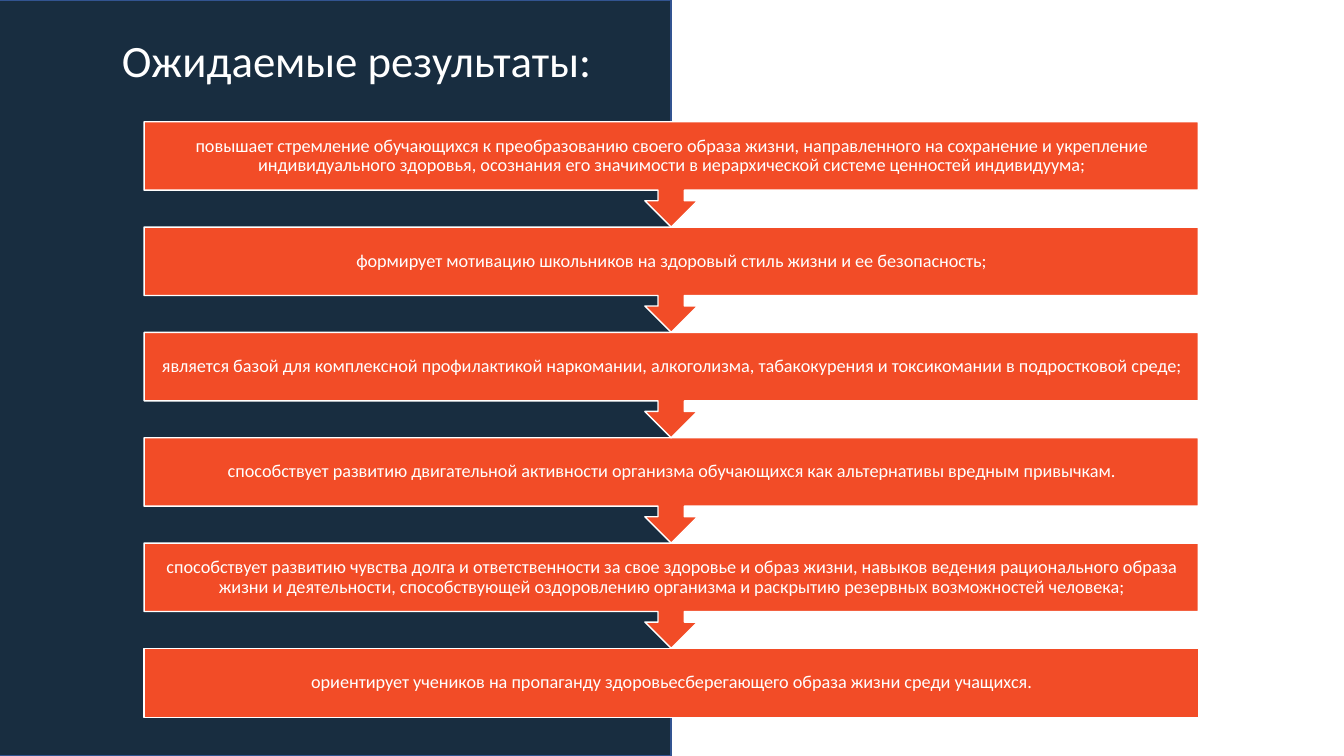
import pptx
import pptx.util
import pptx.dml.color
import pptx.enum.shapes
import pptx.enum.text

NAVY = pptx.dml.color.RGBColor(0x18, 0x2D, 0x40)
NAVY_EDGE = pptx.dml.color.RGBColor(0x32, 0x54, 0x91)
ORANGE = pptx.dml.color.RGBColor(0xF2, 0x4C, 0x27)
WHITE = pptx.dml.color.RGBColor(0xFF, 0xFF, 0xFF)

SHAPES = pptx.enum.shapes.MSO_SHAPE
ALIGN = pptx.enum.text.PP_ALIGN
ANCHOR = pptx.enum.text.MSO_ANCHOR

COLUMNS, ROWS = 160, 90
STEP_LEFT, STEP_TOP, STEP_WIDTH = 17.16, 14.5, 125.5
STEP_PITCH, LAST_HEIGHT = 12.54, 8.24

RESULTS = [
    "повышает стремление обучающихся к преобразованию своего образа жизни, "
    "направленного на сохранение и укрепление индивидуального здоровья, "
    "осознания его значимости в иерархической системе ценностей индивидуума;",
    "формирует мотивацию школьников на здоровый стиль жизни и ее безопасность;",
    "является базой для комплексной профилактикой наркомании, алкоголизма, "
    "табакокурения и токсикомании в подростковой среде;",
    "способствует развитию двигательной активности организма обучающихся "
    "как альтернативы вредным привычкам.",
    "способствует развитию чувства долга и ответственности за свое здоровье "
    "и образ жизни, навыков ведения рационального образа жизни и деятельности, "
    "способствующей оздоровлению организма и раскрытию резервных возможностей человека;",
    "ориентирует учеников на пропаганду здоровьесберегающего образа жизни "
    "среди учащихся.",
]


def write(box, text, size=13, color=WHITE, font="Calibri", align=ALIGN.LEFT,
          anchor=ANCHOR.TOP, spacing=1.0, margin=0.1, margin_y=0.05):
    frame = box.text_frame
    frame.word_wrap = True
    frame.vertical_anchor = anchor
    frame.margin_left = frame.margin_right = pptx.util.Inches(margin)
    frame.margin_top = frame.margin_bottom = pptx.util.Inches(margin_y)
    para = frame.paragraphs[0]
    para.alignment = align
    para.line_spacing = spacing
    span = para.add_run()
    span.text = text
    span.font.name = font
    span.font.size = pptx.util.Pt(size)
    span.font.color.rgb = color


class Page:
    def __init__(self, deck):
        self.column = deck.slide_width / COLUMNS
        self.row = deck.slide_height / ROWS
        self.shapes = deck.slides.add_slide(deck.slide_layouts[6]).shapes

    def place(self, left, top, width, height):
        return (round(left * self.column), round(top * self.row),
                round(width * self.column), round(height * self.row))

    def block(self, kind, area, fill, edge):
        box = self.shapes.add_shape(kind, *self.place(*area))
        box.shadow.inherit = False
        box.fill.solid()
        box.fill.fore_color.rgb = fill
        box.line.color.rgb = edge
        box.line.width = pptx.util.Pt(1)
        return box

    def step(self, index, text, last):
        kind = SHAPES.RECTANGLE if last else SHAPES.DOWN_ARROW_CALLOUT
        height = LAST_HEIGHT if last else STEP_PITCH
        area = (STEP_LEFT, STEP_TOP + index * STEP_PITCH, STEP_WIDTH, height)
        box = self.block(kind, area, ORANGE, WHITE)
        write(box, text, align=ALIGN.CENTER, anchor=ANCHOR.MIDDLE,
              spacing=0.9, margin_y=0.1)

    def title(self, text, area):
        box = self.shapes.add_textbox(*self.place(*area))
        write(box, text, size=32)


def main():
    deck = pptx.Presentation()
    deck.slide_width = pptx.util.Inches(13.33)
    deck.slide_height = pptx.util.Inches(7.5)
    page = Page(deck)
    page.block(SHAPES.RECTANGLE, (-0.1, 0, 80, ROWS), NAVY, NAVY_EDGE)
    last = len(RESULTS) - 1
    for index in range(last, -1, -1):
        page.step(index, RESULTS[index], index == last)
    page.title("Ожидаемые результаты:", (13.32, 3.36, 112.8, 7.68))
    deck.save("out.pptx")


if __name__ == "__main__":
    main()
